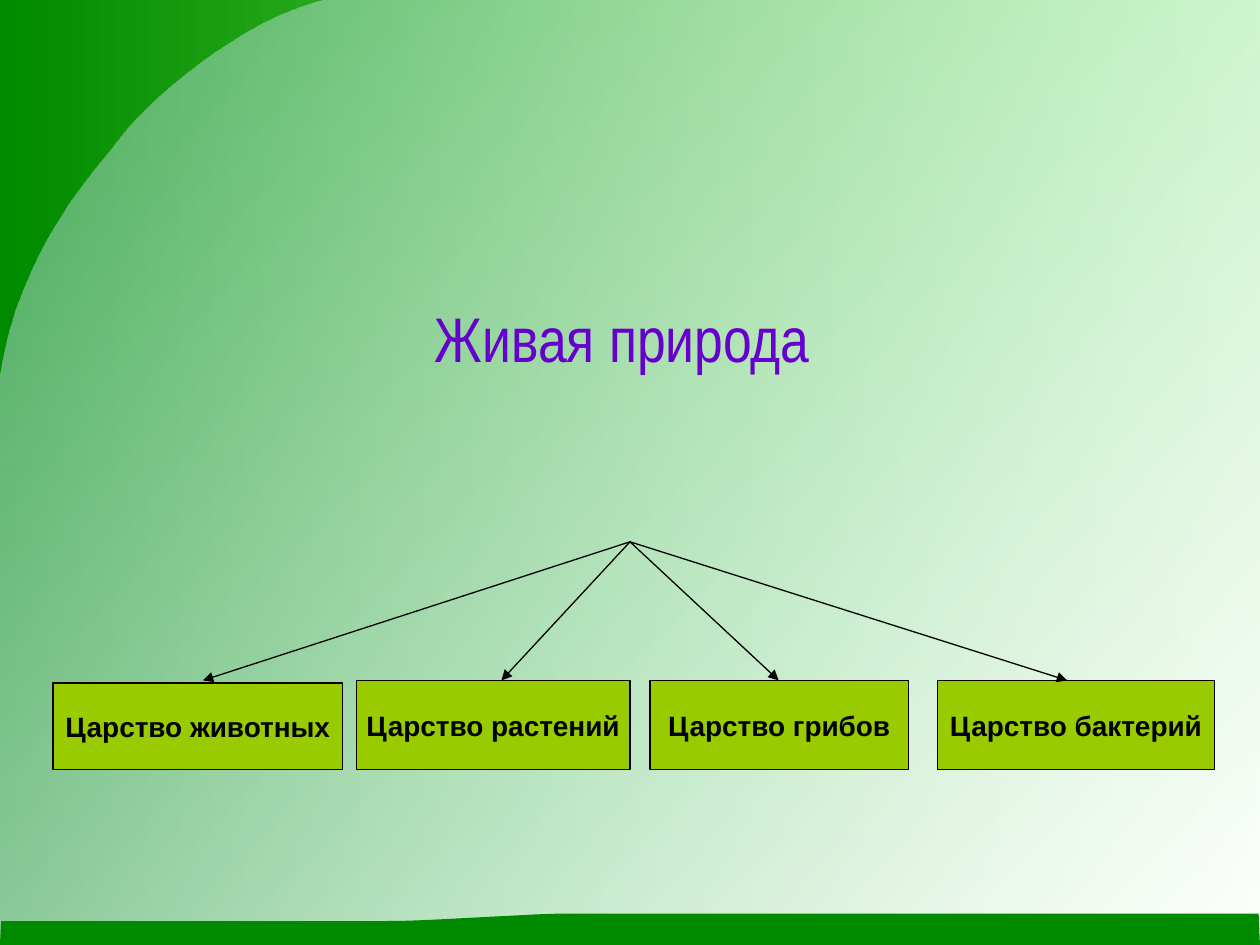
from lxml.etree import SubElement
from pptx import Presentation
from pptx.dml.color import RGBColor
from pptx.enum.shapes import MSO_CONNECTOR, MSO_SHAPE
from pptx.enum.text import MSO_ANCHOR, MSO_AUTO_SIZE, PP_ALIGN
from pptx.oxml.ns import qn
from pptx.util import Inches, Pt

GREEN, LIME, BLACK, PURPLE = "008A00", "99CC00", "000000", "6600CC"


def rgb(value):
    return RGBColor.from_string(value)


def bezier(p0, p1, p2, p3, steps=16):
    """Points along a cubic curve, without its start point."""
    return [
        tuple((1 - t) ** 3 * a + 3 * (1 - t) ** 2 * t * b
              + 3 * (1 - t) * t ** 2 * c + t ** 3 * d
              for a, b, c, d in zip(p0, p1, p2, p3))
        for t in (i / steps for i in range(1, steps + 1))
    ]


def curve(start, *segments):
    """Points of joined cubic curves, start point included."""
    points = [start]
    for segment in segments:
        points += bezier(points[-1], *segment)
    return points


class SlideBuilder:
    def __init__(self, slide):
        self.s = slide

    def gradient(self, fill, start, end, angle=0):
        fill.gradient()
        fill.gradient_angle = angle
        for stop, color in zip(fill.gradient_stops, (start, end)):
            stop.color.rgb = rgb(color)

    def outline(self, points):
        """Closed borderless shape through points given in inches."""
        corners = [(Inches(x), Inches(y)) for x, y in points]
        builder = self.s.shapes.build_freeform(*corners[0])
        builder.add_line_segments(corners[1:], close=True)
        sp = builder.convert_to_shape()
        sp.shadow.inherit = False
        sp.line.fill.background()
        return sp

    def text(self, sp, text, size, font, color, anchor, bold=False):
        tf = sp.text_frame
        tf.text = text
        tf.word_wrap = False
        tf.auto_size = MSO_AUTO_SIZE.NONE
        tf.vertical_anchor = anchor
        p = tf.paragraphs[0]
        p.alignment = PP_ALIGN.CENTER
        p.font.size, p.font.name, p.font.bold = Pt(size), font, bold
        p.font.color.rgb = rgb(color)

    def title(self, text, left, top, width, height):
        sp = self.s.shapes.title
        sp.left, sp.top = Inches(left), Inches(top)
        sp.width, sp.height = Inches(width), Inches(height)
        self.text(sp, text, 36, "Arial Narrow", PURPLE, MSO_ANCHOR.TOP)
        sp._element.getparent().append(sp._element)  # in front of the panels

    def box(self, text, left, top, width, height):
        sp = self.s.shapes.add_shape(
            MSO_SHAPE.RECTANGLE, Inches(left), Inches(top), Inches(width), Inches(height))
        sp.shadow.inherit = False
        sp.fill.solid()
        sp.fill.fore_color.rgb = rgb(LIME)
        sp.line.color.rgb = rgb(BLACK)
        sp.line.width = Pt(0.75)
        self.text(sp, text, 16, "Arial", BLACK, MSO_ANCHOR.MIDDLE, bold=True)

    def arrow(self, start, end):
        line = self.s.shapes.add_connector(
            MSO_CONNECTOR.STRAIGHT, *(Inches(v) for v in (*start, *end)))
        line.line.color.rgb = rgb(BLACK)
        line.line.width = Pt(0.75)
        SubElement(line.line._get_or_add_ln(), qn("a:tailEnd"), type="triangle")
        SubElement(line._element.spPr, qn("a:effectLst"))


def main():
    prs = Presentation()
    prs.slide_width, prs.slide_height = Inches(10), Inches(7.5)
    s = prs.slides.add_slide(prs.slide_layouts[5])
    b = SlideBuilder(s)
    b.gradient(s.background.fill, GREEN, "99FF66")

    leaf = b.outline(curve(
        (2.58, 0),
        ((1.9, 0.16), (1.16, 0.83), (0.98, 1.07)),
        ((0.8, 1.32), (0.16, 1.94), (0, 3.01)),
    ) + [(0, 7.5), (10, 7.5), (10, 0)])
    b.gradient(leaf.fill, "BBE0E3", "FFFFFF", angle=315)
    first_color = next(leaf._element.iter(qn("a:srgbClr")))
    SubElement(first_color, qn("a:alpha"), val="39000")

    ground = b.outline(
        [(9.99, 7.25)]
        + curve((4.73, 7.25), ((4.48, 7.25), (4.41, 7.25), (4.2, 7.26)))
        + curve((3.42, 7.3), ((3.2, 7.31), (3.16, 7.31), (2.86, 7.31)))
        + [(0.01, 7.31), (0, 7.5), (10, 7.5)])
    ground.fill.solid()
    ground.fill.fore_color.rgb = rgb(GREEN)

    b.title("Живая природа", 1.75, 2.33, 6.38, 1.95)

    kingdoms = [  # name, left, top, width, arrow tip
        ("животных", 0.42, 5.42, 2.3, 1.61),
        ("растений", 2.83, 5.4, 2.17, 3.98),
        ("грибов", 5.16, 5.4, 2.05, 6.18),
        ("бактерий", 7.44, 5.4, 2.2, 8.47),
    ]
    bottom = 6.11
    for name, left, top, width, _ in kingdoms:
        b.box(f"Царство {name}", left, top, width, bottom - top)
    for *_, tip in kingdoms:
        b.arrow((5, 4.3), (tip, 5.4))

    prs.save("out.pptx")


if __name__ == "__main__":
    main()
